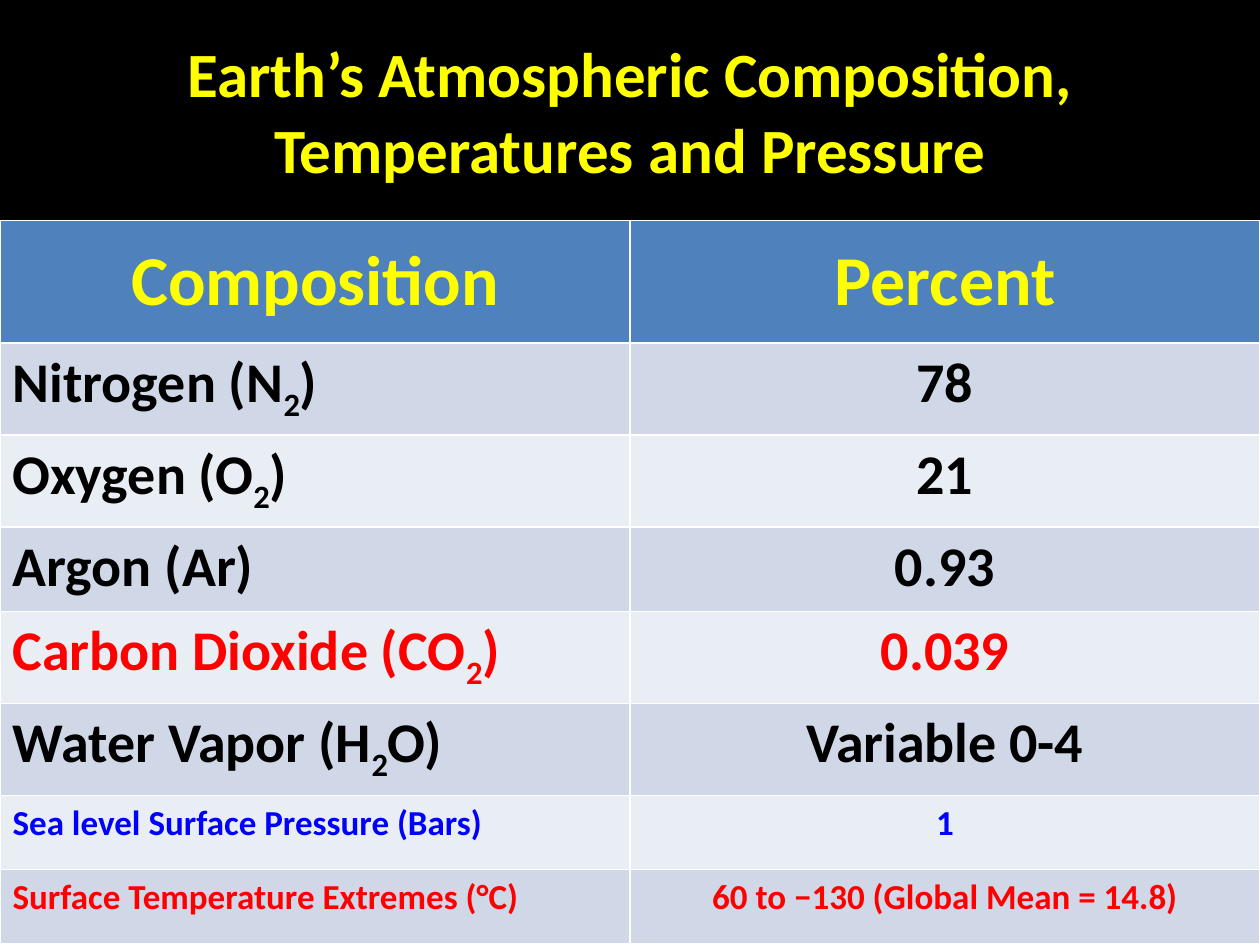
from pptx import Presentation
from pptx.dml.color import RGBColor
from pptx.enum.text import MSO_ANCHOR, PP_ALIGN
from pptx.util import Pt

MIDDLE, TOP = MSO_ANCHOR.MIDDLE, MSO_ANCHOR.TOP
LEFT, CENTER = PP_ALIGN.LEFT, PP_ALIGN.CENTER

BLACK = RGBColor(0x00, 0x00, 0x00)
YELLOW = RGBColor(0xFF, 0xFF, 0x00)
RED = RGBColor(0xFF, 0x00, 0x00)
BLUE = RGBColor(0x00, 0x00, 0xFF)
HEAD = RGBColor(0x4F, 0x81, 0xBD)
BANDS = (RGBColor(0xE9, 0xED, 0xF4), RGBColor(0xD0, 0xD8, 0xE8))

TITLE = "Earth’s Atmospheric Composition, Temperatures and Pressure"
SUB = "2"
ROWS = [
    (("Composition",), "Percent", 70, 40, YELLOW),
    (("Nitrogen (N", SUB, ")"), "78", 52.6, 32, BLACK),
    (("Oxygen (O", SUB, ")"), "21", 52.6, 32, BLACK),
    (("Argon (Ar)",), "0.93", 48.2, 32, BLACK),
    (("Carbon Dioxide (CO", SUB, ")"), "0.039", 52.6, 32, RED),
    (("Water Vapor (H", SUB, "O)"), "Variable 0-4", 52.6, 32, BLACK),
    (("Sea level Surface Pressure (Bars)",), "1", 42.5, 20, BLUE),
    (("Surface Temperature Extremes (°C)",), "60 to −130 (Global Mean = 14.8)",
     42.5, 20, RED),
]


def write(para, parts, size, color, align):
    para.alignment = align
    style = {"name": "Calibri", "size": Pt(size), "bold": True}
    for part in parts:
        run = para.add_run()
        run.text = part
        for key, value in style.items():
            setattr(run.font, key, value)
        run.font.color.rgb = color
        if part == SUB:
            run._r.get_or_add_rPr().set("baseline", "-25000")


def add_title(slide, left, top, width, height):
    title = slide.shapes.title
    box = {"left": left, "top": top, "width": width, "height": height}
    for key, value in box.items():
        setattr(title, key, Pt(value))
    frame = title.text_frame
    frame.word_wrap = True
    frame.vertical_anchor = MIDDLE
    write(frame.paragraphs[0], (TITLE,), 36, YELLOW, CENTER)


def add_grid(slide, left, top, width, height):
    shape = slide.shapes.add_table(
        len(ROWS), 2, Pt(left), Pt(top), Pt(width), Pt(height))
    table = shape.table
    for column in table.columns:
        column.width = Pt(width / 2)
    for i, (name, amount, tall, size, color) in enumerate(ROWS):
        table.rows[i].height = Pt(tall)
        for j, parts in enumerate((name, (amount,))):
            cell = table.cell(i, j)
            cell.fill.solid()
            cell.fill.fore_color.rgb = BANDS[i % 2] if i else HEAD
            cell.vertical_anchor = TOP if i else MIDDLE
            align = LEFT if i and j == 0 else CENTER
            write(cell.text_frame.paragraphs[0], parts, size, color, align)


def main():
    deck = Presentation()
    deck.slide_width, deck.slide_height = Pt(720), Pt(540)
    slide = deck.slides.add_slide(deck.slide_layouts[5])
    fill = slide.background.fill
    fill.solid()
    fill.fore_color.rgb = BLACK
    add_title(slide, 54, 18, 612, 90)
    add_grid(slide, 0, 126, 720, 414)
    deck.save("out.pptx")


if __name__ == "__main__":
    main()
